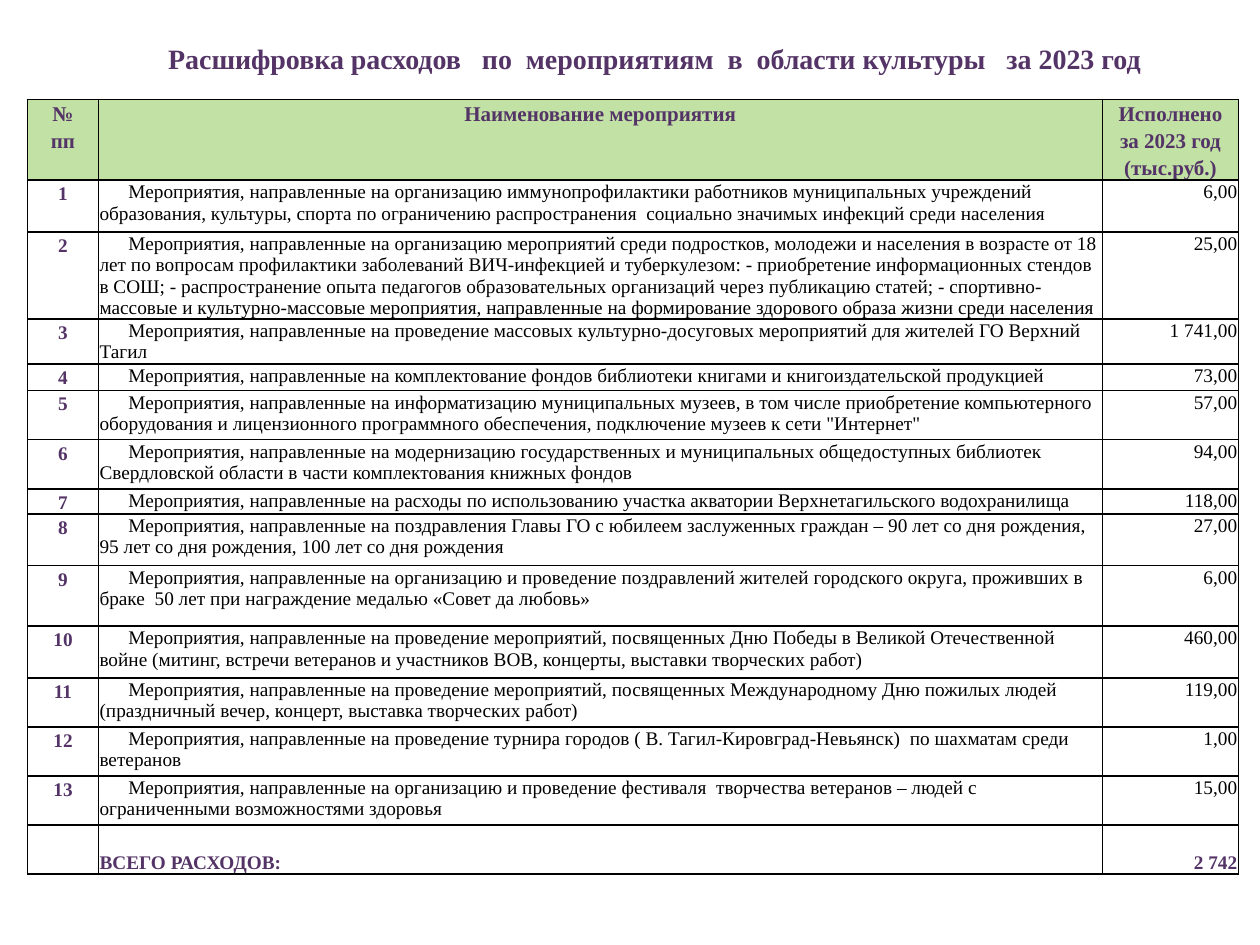
from lxml import etree
from pptx import Presentation
from pptx.dml.color import RGBColor
from pptx.enum.text import MSO_ANCHOR, PP_ALIGN
from pptx.oxml.ns import qn
from pptx.util import Inches, Pt

LEFT, CENTER, RIGHT = PP_ALIGN.LEFT, PP_ALIGN.CENTER, PP_ALIGN.RIGHT
TOP, MIDDLE, BOTTOM = MSO_ANCHOR.TOP, MSO_ANCHOR.MIDDLE, MSO_ANCHOR.BOTTOM

THEME = {
    "font": "Times New Roman",
    "accent": "543466",
    "body": "000000",
    "header_fill": "C2E1A5",
    "border": "000000",
    "title_size": 16,
    "header_size": 12,
    "body_size": 11,
}

TITLE = "Расшифровка расходов   по  мероприятиям  в  области культуры   за 2023 год"
HEADERS = [
    ["№", "пп"],
    ["Наименование мероприятия"],
    ["Исполнено", "за 2023 год", "(тыс.руб.)"],
]
PREFIX = "Мероприятия, направленные на "
EVENTS = [
    ("организацию иммунопрофилактики работников муниципальных учреждений образования, "
     "культуры, спорта по ограничению распространения  социально значимых инфекций "
     "среди населения", "6,00", 0.41),
    ("организацию мероприятий среди подростков, молодежи и населения в возрасте от 18 "
     "лет по вопросам профилактики заболеваний ВИЧ-инфекцией и туберкулезом: "
     "- приобретение информационных стендов в СОШ; - распространение опыта педагогов "
     "образовательных организаций через публикацию статей; - спортивно-массовые и "
     "культурно-массовые мероприятия, направленные на формирование здорового образа "
     "жизни среди населения", "25,00", 0.69),
    ("проведение массовых культурно-досуговых мероприятий для жителей ГО Верхний Тагил",
     "1 741,00", 0.36),
    ("комплектование фондов библиотеки книгами и книгоиздательской продукцией",
     "73,00", 0.21),
    ("информатизацию муниципальных музеев, в том числе приобретение компьютерного "
     "оборудования и лицензионного программного обеспечения, подключение музеев "
     "к сети \"Интернет\"", "57,00", 0.39),
    ("модернизацию государственных и муниципальных общедоступных библиотек "
     "Свердловской области в части комплектования книжных фондов", "94,00", 0.39),
    ("расходы по использованию участка акватории Верхнетагильского водохранилища",
     "118,00", 0.2),
    ("поздравления Главы ГО с юбилеем заслуженных граждан – 90 лет со дня рождения, "
     "95 лет со дня рождения, 100 лет со дня рождения", "27,00", 0.41),
    ("организацию и проведение поздравлений жителей городского округа, проживших в "
     "браке  50 лет при награждение медалью «Совет да любовь»", "6,00", 0.48),
    ("проведение мероприятий, посвященных Дню Победы в Великой Отечественной войне "
     "(митинг, встречи ветеранов и участников ВОВ, концерты, выставки творческих работ)",
     "460,00", 0.41),
    ("проведение мероприятий, посвященных Международному Дню пожилых людей "
     "(праздничный вечер, концерт, выставка творческих работ)", "119,00", 0.39),
    ("проведение турнира городов ( В. Тагил-Кировград-Невьянск)  по шахматам среди "
     "ветеранов", "1,00", 0.39),
    ("организацию и проведение фестиваля  творчества ветеранов – людей с "
     "ограниченными возможностями здоровья", "15,00", 0.39),
]
TOTAL = ("ВСЕГО РАСХОДОВ:", "2 742")

COLUMNS = [0.56, 7.97, 1.08]
HEADER_HEIGHT, TOTAL_HEIGHT = 0.64, 0.39
TABLE_LEFT, TABLE_TOP = 0.22, 0.79
TITLE_BOX = (0.39, 0.27, 9.61, 0.52)
FIRST_LINE = 0.23


def write(frame, lines, size=THEME["body_size"], color=THEME["accent"], bold=True,
          align=CENTER, spacing=1.0, indent=0):
    for index, text in enumerate(lines):
        para = frame.paragraphs[0] if index == 0 else frame.add_paragraph()
        para.alignment = align
        para.line_spacing = spacing
        if indent:
            props = para._p.get_or_add_pPr()
            props.set("marL", "0")
            props.set("indent", str(Inches(indent)))
        span = para.add_run()
        span.text = text
        span.font.name = THEME["font"]
        span.font.size = Pt(size)
        span.font.bold = bold
        span.font.color.rgb = RGBColor.from_string(color)


def frame_cell(cell):
    props = cell._tc.get_or_add_tcPr()
    for position, side in enumerate(("lnL", "lnR", "lnT", "lnB")):
        line = etree.Element(qn(f"a:{side}"), w=str(Pt(1)))
        fill = etree.SubElement(line, qn("a:solidFill"))
        etree.SubElement(fill, qn("a:srgbClr"), val=THEME["border"])
        props.insert(position, line)


def set_cell(cell, lines, fill=None, margins=(0.01, 0.01), anchor=TOP, **style):
    side, top = margins
    cell.margin_left = cell.margin_right = Inches(side)
    cell.margin_top, cell.margin_bottom = Inches(top), 0
    cell.vertical_anchor = anchor
    if fill:
        cell.fill.solid()
        cell.fill.fore_color.rgb = RGBColor.from_string(fill)
    else:
        cell.fill.background()
    frame_cell(cell)
    write(cell.text_frame, lines, **style)


def add_title(page):
    box = page.shapes.add_textbox(*map(Inches, TITLE_BOX))
    frame = box.text_frame
    frame.word_wrap = True
    frame.vertical_anchor = MIDDLE
    frame.margin_bottom = Inches(0.18)
    write(frame, [TITLE], size=THEME["title_size"])


def add_expenses(page):
    heights = [HEADER_HEIGHT, *(height for _, _, height in EVENTS), TOTAL_HEIGHT]
    area = (TABLE_LEFT, TABLE_TOP, sum(COLUMNS), sum(heights))
    table = page.shapes.add_table(len(heights), len(COLUMNS), *map(Inches, area)).table
    table.first_row = table.horz_banding = False
    for column, width in zip(table.columns, COLUMNS):
        column.width = Inches(width)
    for row, height in zip(table.rows, heights):
        row.height = Inches(height)

    for column, lines in enumerate(HEADERS):
        set_cell(table.cell(0, column), lines, fill=THEME["header_fill"],
                 margins=(0.04, 0), size=THEME["header_size"], spacing=1.15)

    plain = {"color": THEME["body"], "bold": False}
    for number, (name, amount, _) in enumerate(EVENTS, start=1):
        set_cell(table.cell(number, 0), [str(number)], margins=(0.05, 0), spacing=1.15)
        set_cell(table.cell(number, 1), [PREFIX + name], align=LEFT,
                 indent=FIRST_LINE, **plain)
        set_cell(table.cell(number, 2), [amount], align=RIGHT, **plain)

    last = len(heights) - 1
    label, amount = TOTAL
    set_cell(table.cell(last, 0), [])
    set_cell(table.cell(last, 1), [label], align=LEFT, anchor=BOTTOM)
    set_cell(table.cell(last, 2), [amount], align=RIGHT, anchor=BOTTOM)


def main():
    deck = Presentation()
    deck.slide_width, deck.slide_height = Inches(10), Inches(7.5)
    page = deck.slides.add_slide(deck.slide_layouts[6])
    add_expenses(page)
    add_title(page)
    deck.save("out.pptx")


if __name__ == "__main__":
    main()
